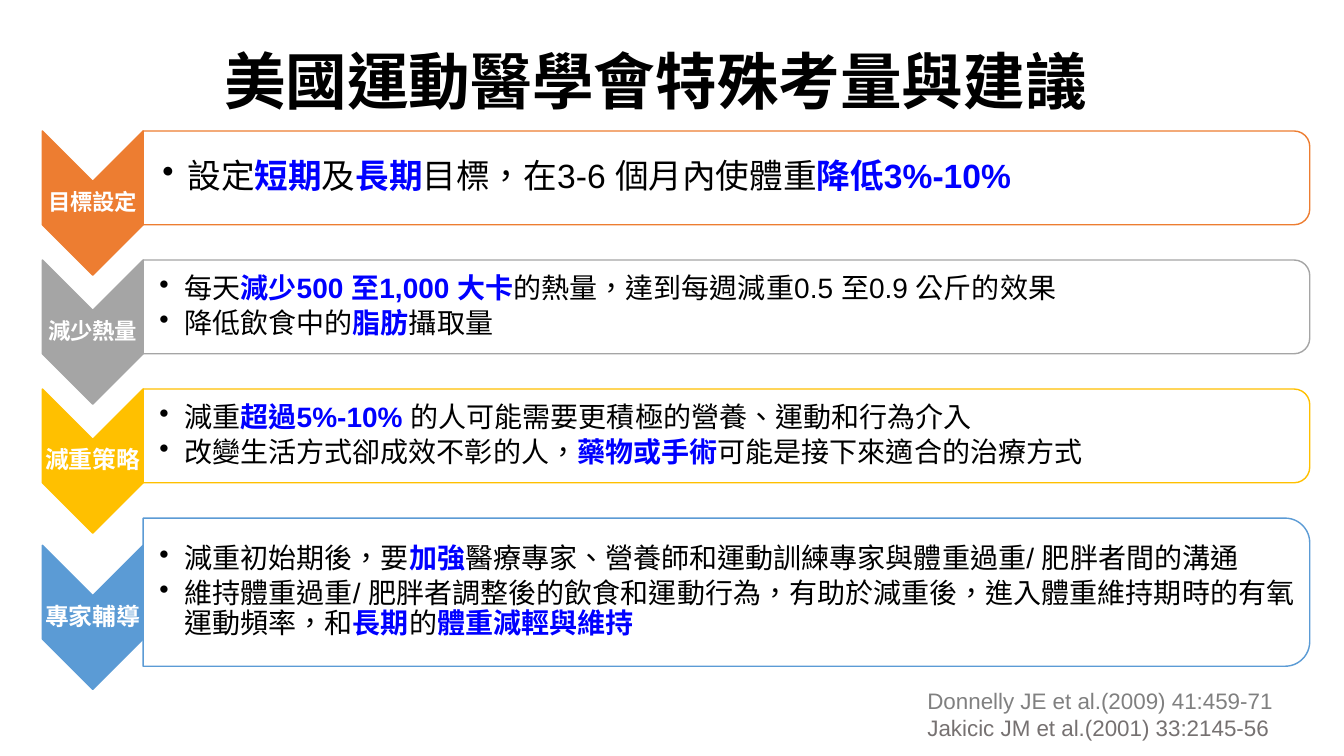
from dataclasses import dataclass
from pptx import Presentation
from pptx.dml.color import RGBColor
from pptx.enum.shapes import MSO_SHAPE as Preset
from pptx.enum.text import MSO_ANCHOR as Anchor, PP_ALIGN as Align
from pptx.oxml.ns import qn
from pptx.util import Inches, Pt
from lxml.etree import SubElement

# Content: text between asterisks is emphasised
TITLE = "美國運動醫學會特殊考量與建議"
# label, label size, accent, panel height, text size, left inset, points
STEPS = [
    ("目標設定", 16, "ED7D31", 0.93, 24, 0.19,
     ["設定*短期*及*長期*目標，在3-6 個月內使體重*降低3%-10%*"]),
    ("減少熱量", 16, "A5A5A5", 0.93, 20, 0.16,
     ["每天*減少500 至1,000 大卡*的熱量，達到每週減重0.5 至0.9 公斤的效果",
      "降低飲食中的*脂肪*攝取量"]),
    ("減重策略", 17, "FFC000", 0.93, 20, 0.16,
     ["減重*超過5%-10% *的人可能需要更積極的營養、運動和行為介入",
      "改變生活方式卻成效不彰的人，*藥物或手術*可能是接下來適合的治療方式"]),
    ("專家輔導", 17, "5B9BD5", 1.47, 20, 0.16,
     ["減重初始期後，要*加強*醫療專家、營養師和運動訓練專家與體重過重/ 肥胖者間的溝通",
      "維持體重過重/ 肥胖者調整後的飲食和運動行為，有助於減重後，"
      "進入體重維持期時的有氧運動頻率，和*長期*的*體重減輕與維持*"]),
]
CITATIONS = [("Donnelly JE et al.(2009) 41:459-71", "808080"),
             ("Jakicic JM et al.(2001) 33:2145-56", "767171")]


@dataclass(frozen=True)
class Theme:
    font: str = "Arial"
    ink: str = "000000"
    paper: str = "FFFFFF"
    accent: str = "0000FF"
    title: int = 44
    citation: int = 16


THEME = Theme()

# Grid, in inches
WIDTH, HEIGHT = 13.33, 7.5
FIRST_TOP, PITCH, ROW = 1.3, 1.28, 0.93
ARROW_LEFT, ARROW_WIDTH, ARROW_HEIGHT = 0.42, 1, 1.43
PANEL_LEFT, PANEL_WIDTH = ARROW_LEFT + ARROW_WIDTH, 11.57
LABEL_DROP, LABEL_HEIGHT = 0.5, 0.43
BULLET_INDENT = 0.25

deck = Presentation()
deck.slide_width, deck.slide_height = Inches(WIDTH), Inches(HEIGHT)
page = deck.slides.add_slide(deck.slide_layouts[6])


def add_span(para, text, size, color, bold=False):
    span = para.add_run()
    span.text = text
    font = span.font
    font.name, font.size, font.bold = THEME.font, Pt(size), bold
    font.color.rgb = RGBColor.from_string(color)
    span._r.get_or_add_rPr().set("lang", "zh-TW")


def add_box(left, top, width, height, insets=None, anchor=Anchor.MIDDLE):
    box = page.shapes.add_textbox(*map(Inches, (left, top, width, height)))
    frame = box.text_frame
    frame.word_wrap, frame.vertical_anchor = True, anchor
    if insets:
        (frame.margin_left, frame.margin_top,
         frame.margin_right, frame.margin_bottom) = map(Inches, insets)
    return frame


def add_turned(preset, left, top, width, height, fill, line):
    """Place a preset turned 90 degrees so that it covers the given area."""
    shape = page.shapes.add_shape(
        preset, Inches(left + (width - height) / 2),
        Inches(top + (height - width) / 2), Inches(height), Inches(width))
    shape.rotation = 90
    shape.shadow.inherit = False
    shape.fill.solid()
    shape.fill.fore_color.rgb = RGBColor.from_string(fill)
    shape.line.color.rgb = RGBColor.from_string(line)
    shape.line.width = Pt(1)
    return shape


def add_bullet(para):
    para.level = 1
    props = para._p.get_or_add_pPr()
    props.set("marL", str(Inches(BULLET_INDENT)))
    props.set("indent", str(-Inches(BULLET_INDENT)))
    SubElement(props, qn("a:buChar")).set("char", "•")


# Citations
frame = add_box(9.1, 6.77, 3.67, 0.64, anchor=Anchor.TOP)
frame.word_wrap = False
for index, (citation, color) in enumerate(CITATIONS):
    para = frame.add_paragraph() if index else frame.paragraphs[0]
    add_span(para, citation, THEME.citation, color)

# Title
para = add_box(-0.16, 0.19, WIDTH, 1.2).paragraphs[0]
para.alignment = Align.CENTER
add_span(para, TITLE, THEME.title, THEME.ink, True)

# Steps: arrow, label, panel, points
for row, (label, label_size, color, height, size, inset, points) in enumerate(STEPS):
    top = FIRST_TOP + row * PITCH
    arrow_top = top + (height - ROW) / 2
    add_turned(Preset.CHEVRON, ARROW_LEFT, arrow_top,
               ARROW_WIDTH, ARROW_HEIGHT, color, color)
    para = add_box(ARROW_LEFT, arrow_top + LABEL_DROP, ARROW_WIDTH,
                   LABEL_HEIGHT, [0.01] * 4).paragraphs[0]
    para.alignment, para.line_spacing = Align.CENTER, 0.9
    add_span(para, label, label_size, THEME.paper, True)

    add_turned(Preset.ROUND_2_SAME_RECTANGLE, PANEL_LEFT, top,
               PANEL_WIDTH, height, THEME.paper, color)
    margin = height * 0.05
    frame = add_box(PANEL_LEFT, top + margin, PANEL_WIDTH - margin,
                    height - 2 * margin, [inset, 0.01, 0.01, 0.01])
    for index, point in enumerate(points):
        para = frame.add_paragraph() if index else frame.paragraphs[0]
        add_bullet(para)
        para.line_spacing, para.space_after = 0.9, Pt(size * 0.15)
        for part, text in enumerate(point.split("*")):
            strong = part % 2 == 1
            if text:
                add_span(para, text, size,
                         THEME.accent if strong else THEME.ink, strong)

deck.save("out.pptx")
